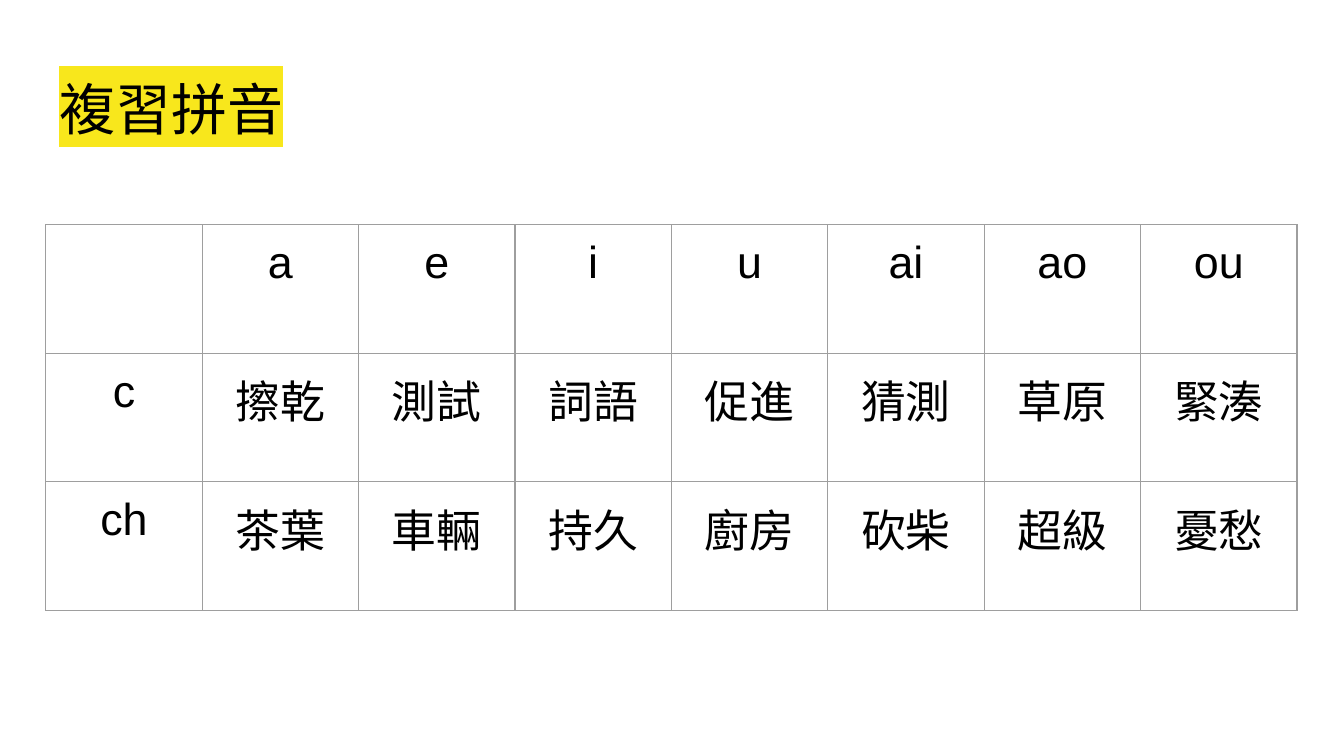
from lxml import etree
from pptx import Presentation
from pptx.dml.color import RGBColor
from pptx.enum.text import MSO_ANCHOR, MSO_AUTO_SIZE, PP_ALIGN
from pptx.oxml.ns import qn
from pptx.util import Pt

LEFT, CENTER = PP_ALIGN.LEFT, PP_ALIGN.CENTER
TOP, MIDDLE = MSO_ANCHOR.TOP, MSO_ANCHOR.MIDDLE
NO_FIT = MSO_AUTO_SIZE.NONE

# Content
TITLE = "複習拼音"
PINYIN = [
    ["", "a", "e", "i", "u", "ai", "ao", "ou"],
    ["c", "擦乾", "測試", "詞語", "促進", "猜測", "草原", "緊湊"],
    ["ch", "茶葉", "車輛", "持久", "廚房", "砍柴", "超級", "憂愁"],
]

# Style, lengths in points
BLACK = RGBColor(0x00, 0x00, 0x00)
GREY = RGBColor(0x9E, 0x9E, 0x9E)
YELLOW = RGBColor(0xF8, 0xE7, 0x1C)
PAGE_WIDTH, PAGE_HEIGHT = 720, 405
MARGIN = 24.5
TITLE_TOP, TITLE_HEIGHT = 35.3, 45.4
TABLE_TOP, COLUMN_WIDTH, ROW_HEIGHT = 120.4, 83.8, 68.9
INSET, BORDER_WIDTH = 7.2, 0.75


def add_solid_fill(parent, color):
    fill = etree.SubElement(parent, qn("a:solidFill"))
    etree.SubElement(fill, qn("a:srgbClr"), val=str(color))


def write(frame, text, *, size, font, align=LEFT, highlight=None):
    para = frame.paragraphs[0]
    para.alignment = align
    span = para.add_run()
    span.text = text
    span.font.size = Pt(size)
    span.font.bold = False
    span.font.name = font
    span.font.color.rgb = BLACK
    if highlight is not None:
        mark = etree.Element(qn("a:highlight"))
        etree.SubElement(mark, qn("a:srgbClr"), val=str(highlight))
        span.font._element.find(qn("a:solidFill")).addnext(mark)


def set_insets(target):
    target.margin_left = target.margin_right = Pt(INSET)
    target.margin_top = target.margin_bottom = Pt(INSET)


def set_borders(cell):
    properties = cell._tc.get_or_add_tcPr()
    for index, side in enumerate(("lnL", "lnR", "lnT", "lnB")):
        line = etree.Element(qn(f"a:{side}"), w=str(Pt(BORDER_WIDTH)))
        add_solid_fill(line, GREY)
        properties.insert(index, line)


def add_title(page):
    box = page.shapes.title
    box.left, box.top = Pt(MARGIN), Pt(TITLE_TOP)
    box.width, box.height = Pt(PAGE_WIDTH - 2 * MARGIN), Pt(TITLE_HEIGHT)
    frame = box.text_frame
    frame.word_wrap = True
    frame.auto_size = NO_FIT
    frame.vertical_anchor = MIDDLE
    set_insets(frame)
    write(frame, TITLE, size=30, font="Roboto Condensed", highlight=YELLOW)


def add_pinyin_table(page):
    rows, columns = len(PINYIN), len(PINYIN[0])
    table = page.shapes.add_table(
        rows, columns, Pt(MARGIN), Pt(TABLE_TOP),
        Pt(columns * COLUMN_WIDTH), Pt(rows * ROW_HEIGHT)).table
    table.first_row = table.horz_banding = False
    for column in table.columns:
        column.width = Pt(COLUMN_WIDTH)
    for row, words in zip(table.rows, PINYIN):
        row.height = Pt(ROW_HEIGHT)
        for cell, word in zip(row.cells, words):
            cell.fill.background()
            cell.vertical_anchor = TOP
            set_insets(cell)
            set_borders(cell)
            if word:
                write(cell.text_frame, word, size=24, font="Arial", align=CENTER)


def main():
    deck = Presentation()
    deck.slide_width, deck.slide_height = Pt(PAGE_WIDTH), Pt(PAGE_HEIGHT)
    page = deck.slides.add_slide(deck.slide_layouts[5])
    add_title(page)
    add_pinyin_table(page)
    deck.save("out.pptx")


if __name__ == "__main__":
    main()
